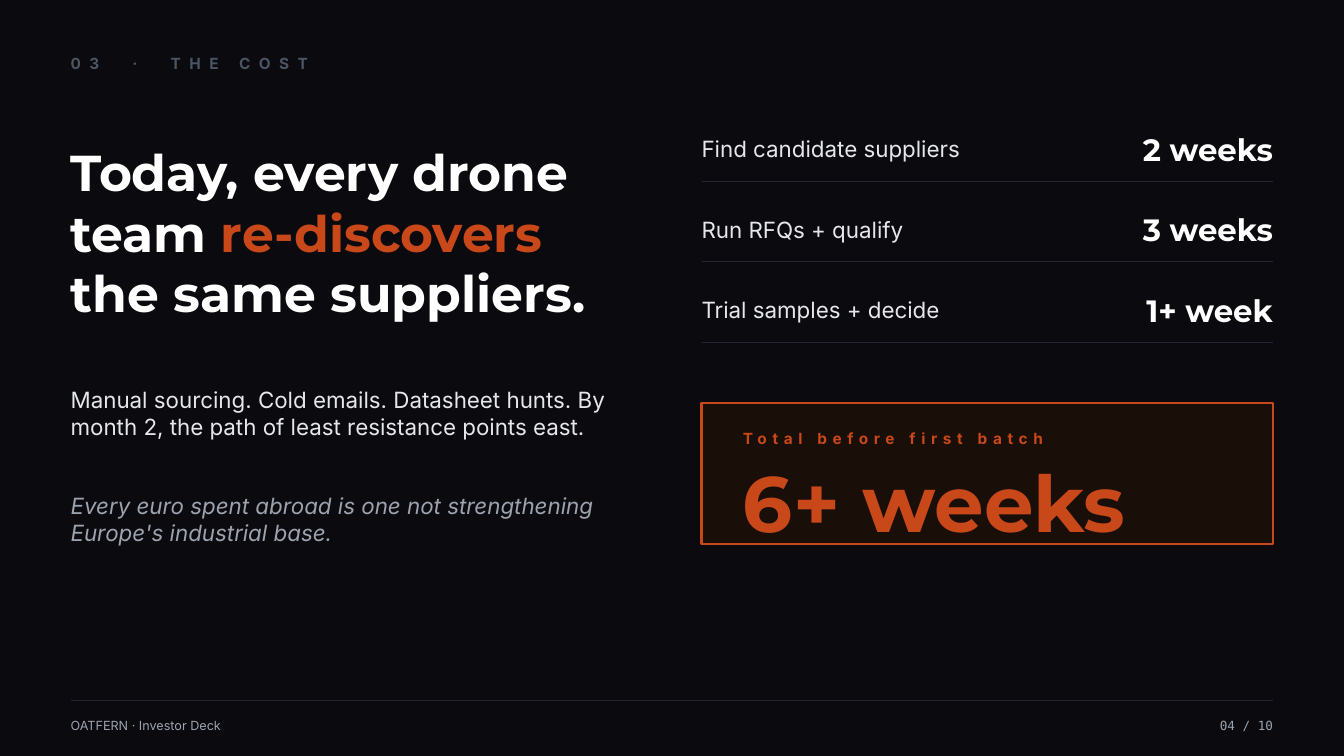
from dataclasses import dataclass

import lxml.etree
import pptx
import pptx.dml.color
import pptx.enum.shapes
import pptx.enum.text
import pptx.oxml.ns
import pptx.util

Cm = pptx.util.Cm
Pt = pptx.util.Pt
ALIGN = pptx.enum.text.PP_ALIGN


@dataclass(frozen=True)
class Theme:
    back: str = "0A0A0F"
    white: str = "FFFFFF"
    pale: str = "E5E7EB"
    grey: str = "9CA3AF"
    slate: str = "4B5563"
    rule: str = "262633"
    accent: str = "C8481A"
    ember: str = "1A0E08"
    head: str = "Montserrat"
    sans: str = "Inter"
    mono: str = "DejaVu Sans Mono"
    small: float = 9
    label: float = 11
    text: float = 16
    value: float = 22
    title: float = 36
    total: float = 56


THEME = Theme()
LEFT, RIGHT = 1.78, 32.08
WIDE = 14.4
COL = RIGHT - WIDE
STEP = 2.03
STAGES = [
    ("Find candidate suppliers", "2 weeks"),
    ("Run RFQs + qualify", "3 weeks"),
    ("Trial samples + decide", "1+ week"),
]


def rgb(code):
    return pptx.dml.color.RGBColor.from_string(code)


def place(shape, x, y, w, h):
    shape.left, shape.top, shape.width, shape.height = Cm(x), Cm(y), Cm(w), Cm(h)
    return shape


def box(slide, x, y, w, h):
    return slide.shapes.add_textbox(Cm(x), Cm(y), Cm(w), Cm(h))


def write(shape, text, size=THEME.text, font=THEME.sans, color=THEME.pale,
          bold=False, italic=False, align=ALIGN.LEFT, track=0):
    """Fill a shape with text, or with (text, color, tracking) runs."""
    frame = shape.text_frame
    frame.word_wrap = True
    frame.auto_size = pptx.enum.text.MSO_AUTO_SIZE.NONE
    frame.vertical_anchor = pptx.enum.text.MSO_ANCHOR.MIDDLE
    frame.margin_left = frame.margin_right = 0
    frame.margin_top = frame.margin_bottom = 0
    para = frame.paragraphs[0]
    if shape.is_placeholder:
        props = para._p.get_or_add_pPr()
        props.set("marL", "0")
        props.set("indent", "0")
        lxml.etree.SubElement(props, pptx.oxml.ns.qn("a:buNone"))
    para.alignment = align
    para.space_before = Pt(0)
    parts = [(text, color, track)] if isinstance(text, str) else text
    for words, tint, gap in parts:
        run = para.add_run()
        run.text = words
        run.font.size = Pt(size)
        run.font.name = font
        run.font.bold = bold
        run.font.italic = italic
        run.font.color.rgb = rgb(tint)
        if gap:
            run._r.get_or_add_rPr().set("spc", str(gap * 100))


def rule(slide, x, y, width):
    line = slide.shapes.add_connector(
        pptx.enum.shapes.MSO_CONNECTOR.STRAIGHT, Cm(x), Cm(y), Cm(RIGHT), Cm(y))
    line.line.color.rgb = rgb(THEME.rule)
    line.line.width = Pt(width)
    lxml.etree.SubElement(line._element.spPr, pptx.oxml.ns.qn("a:effectLst"))


def stage(slide, y, name, time):
    write(box(slide, COL, y, 9.36, 1.4), name)
    write(box(slide, RIGHT - 5.04, y, 5.04, 1.4), time, size=THEME.value,
          font=THEME.head, color=THEME.white, bold=True, align=ALIGN.RIGHT)
    rule(slide, COL, y + 1.52, 0.75)


def total(slide, y):
    card = slide.shapes.add_shape(
        pptx.enum.shapes.MSO_SHAPE.RECTANGLE, Cm(COL), Cm(y), Cm(WIDE), Cm(3.56))
    card.shadow.inherit = False
    card.fill.solid()
    card.fill.fore_color.rgb = rgb(THEME.ember)
    card.line.color.rgb = rgb(THEME.accent)
    card.line.width = Pt(1.5)
    inset = COL + 1.04
    write(box(slide, inset, y + 0.38, 12.37, 1.02), "Total before first batch",
          size=THEME.label, color=THEME.accent, bold=True, track=4)
    write(box(slide, inset, y + 1.4, 12.37, 2.16), "6+ weeks",
          size=THEME.total, font=THEME.head, color=THEME.accent, bold=True)


def story(slide):
    title, body, aside = slide.placeholders
    write(place(title, LEFT, 3.05, WIDE, 5.59),
          [("Today, every drone team ", THEME.white, 0),
           ("re-discovers ", THEME.accent, 0),
           ("the same suppliers.", THEME.white, 0)],
          size=THEME.title, font=THEME.head, bold=True)
    write(place(body, LEFT, 9.14, WIDE, 2.54),
          "Manual sourcing. Cold emails. Datasheet hunts. "
          "By month 2, the path of least resistance points east.")
    write(place(aside, LEFT, 11.94, WIDE, 2.29),
          "Every euro spent abroad is one not strengthening "
          "Europe's industrial base.", color=THEME.grey, italic=True)


def footer(slide):
    rule(slide, LEFT, 17.65, 0.5)
    write(box(slide, LEFT, 17.91, 10.16, 0.76), "OATFERN · Investor Deck",
          size=THEME.small, color=THEME.grey)
    write(box(slide, RIGHT - 3.81, 17.91, 3.81, 0.76), "04 / 10",
          size=THEME.small, font=THEME.mono, color=THEME.grey, align=ALIGN.RIGHT)


def main():
    deck = pptx.Presentation()
    deck.slide_width, deck.slide_height = Cm(33.87), Cm(19.05)
    slide = deck.slides.add_slide(deck.slide_layouts.get_by_name("Two Content"))
    slide.background.fill.solid()
    slide.background.fill.fore_color.rgb = rgb(THEME.back)

    gap = (" ", THEME.slate, 15)
    words = [(word, THEME.slate, 6) for word in ("03", "·", "THE COST")]
    write(box(slide, LEFT, 1.14, RIGHT - LEFT, 0.89),
          [words[0], gap, words[1], gap, words[2]], size=THEME.label, bold=True)
    story(slide)
    for row, (name, time) in enumerate(STAGES):
        stage(slide, 3.05 + row * STEP, name, time)
    total(slide, 10.16)
    footer(slide)
    deck.save("out.pptx")


if __name__ == "__main__":
    main()
